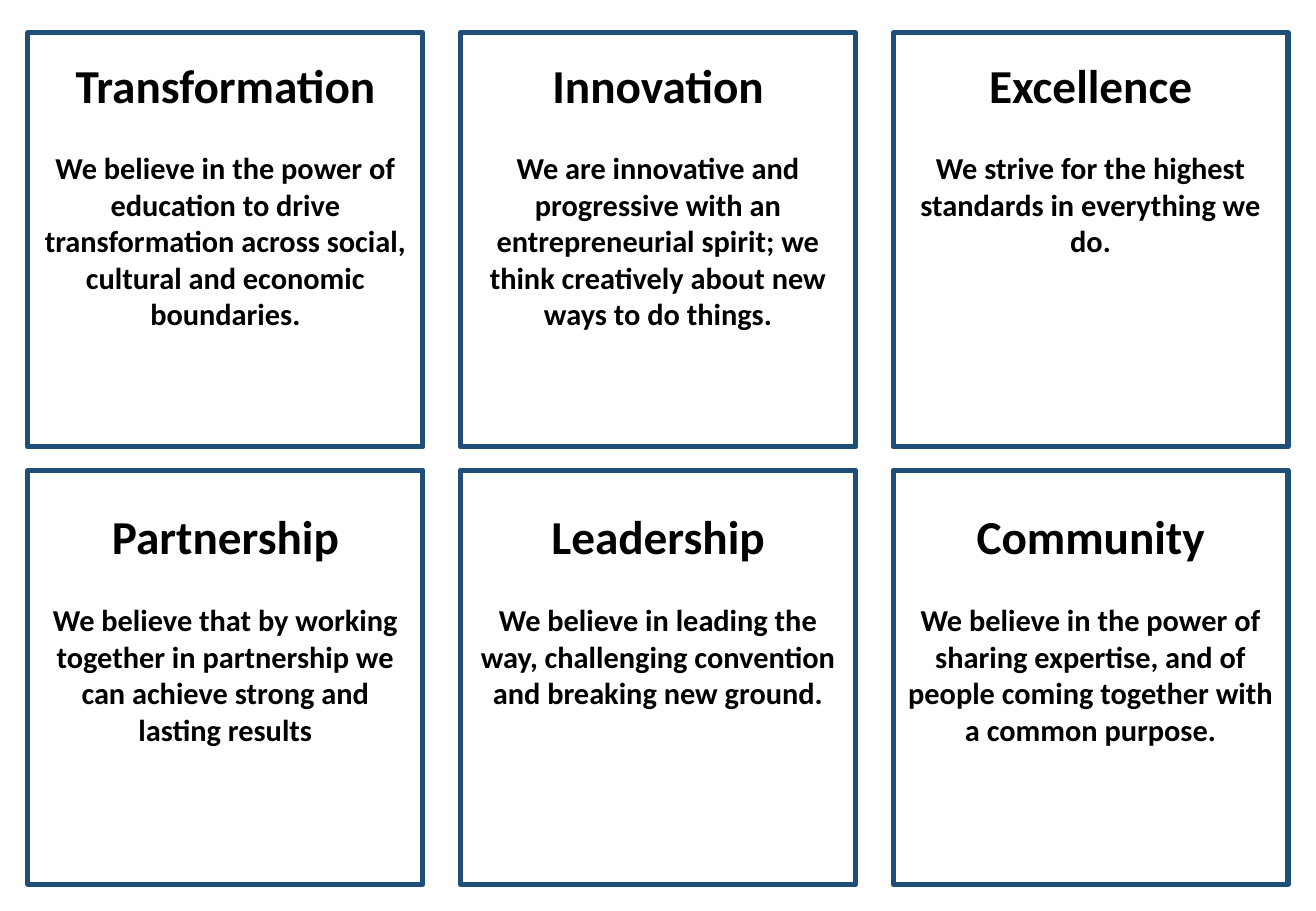
from pptx import Presentation
from pptx.dml.color import RGBColor
from pptx.enum.shapes import MSO_SHAPE
from pptx.enum.text import MSO_AUTO_SIZE, PP_ALIGN
from pptx.util import Inches, Pt

# Content: two rows of three values
VALUES = [
    [
        ("Transformation", "We believe in the power of education to drive transformation "
                           "across social, cultural and economic boundaries."),
        ("Innovation", "We are innovative and progressive with an entrepreneurial spirit; "
                       "we think creatively about new ways to do things."),
        ("Excellence", "We strive for the highest standards in everything we do."),
    ],
    [
        ("Partnership", "We believe that by working together in partnership we can achieve "
                        "strong and lasting results"),
        ("Leadership", "We believe in leading the way, challenging convention and breaking "
                       "new ground."),
        ("Community", "We believe in the power of sharing expertise, and of people coming "
                      "together with a common purpose."),
    ],
]
COLORS = {"border": "1F4E79", "text": "000000"}
FONT = "Calibri"

# Grid, in inches
LEFT, TOP = 0.23, 0.27
CARD_WIDTH, CARD_HEIGHT = 3.25, 3.41
COLUMN_STEP, ROW_STEP = 3.56, 3.6
TEXT_TOPS = (0.41, 4.13)
TEXT_HEIGHT = 2.39


def write_paragraph(para, text, size, space_before=0):
    para.alignment = PP_ALIGN.CENTER
    para.space_before = Pt(space_before)
    span = para.add_run()
    span.text = text
    span.font.name = FONT
    span.font.size = Pt(size)
    span.font.bold = True
    span.font.color.rgb = RGBColor.from_string(COLORS["text"])


def add_card(page, left, top):
    card = page.shapes.add_shape(MSO_SHAPE.RECTANGLE, Inches(left), Inches(top),
                                 Inches(CARD_WIDTH), Inches(CARD_HEIGHT))
    card.shadow.inherit = False
    card.fill.background()
    card.line.color.rgb = RGBColor.from_string(COLORS["border"])
    card.line.width = Pt(3)


def add_value_text(page, left, top, heading, statement):
    box = page.shapes.add_textbox(Inches(left), Inches(top),
                                  Inches(CARD_WIDTH), Inches(TEXT_HEIGHT))
    frame = box.text_frame
    frame.word_wrap = True
    frame.auto_size = MSO_AUTO_SIZE.SHAPE_TO_FIT_TEXT
    write_paragraph(frame.paragraphs[0], heading, size=28)
    write_paragraph(frame.add_paragraph(), statement, size=18, space_before=22)


def main():
    deck = Presentation()
    deck.slide_width, deck.slide_height = Inches(10.83), Inches(7.5)
    page = deck.slides.add_slide(deck.slide_layouts[6])

    # Bordered cards with their text
    for row, values in enumerate(VALUES):
        for column, (heading, statement) in enumerate(values):
            left = LEFT + column * COLUMN_STEP
            add_card(page, left, TOP + row * ROW_STEP)
            add_value_text(page, left, TEXT_TOPS[row], heading, statement)

    deck.save("out.pptx")


if __name__ == "__main__":
    main()
